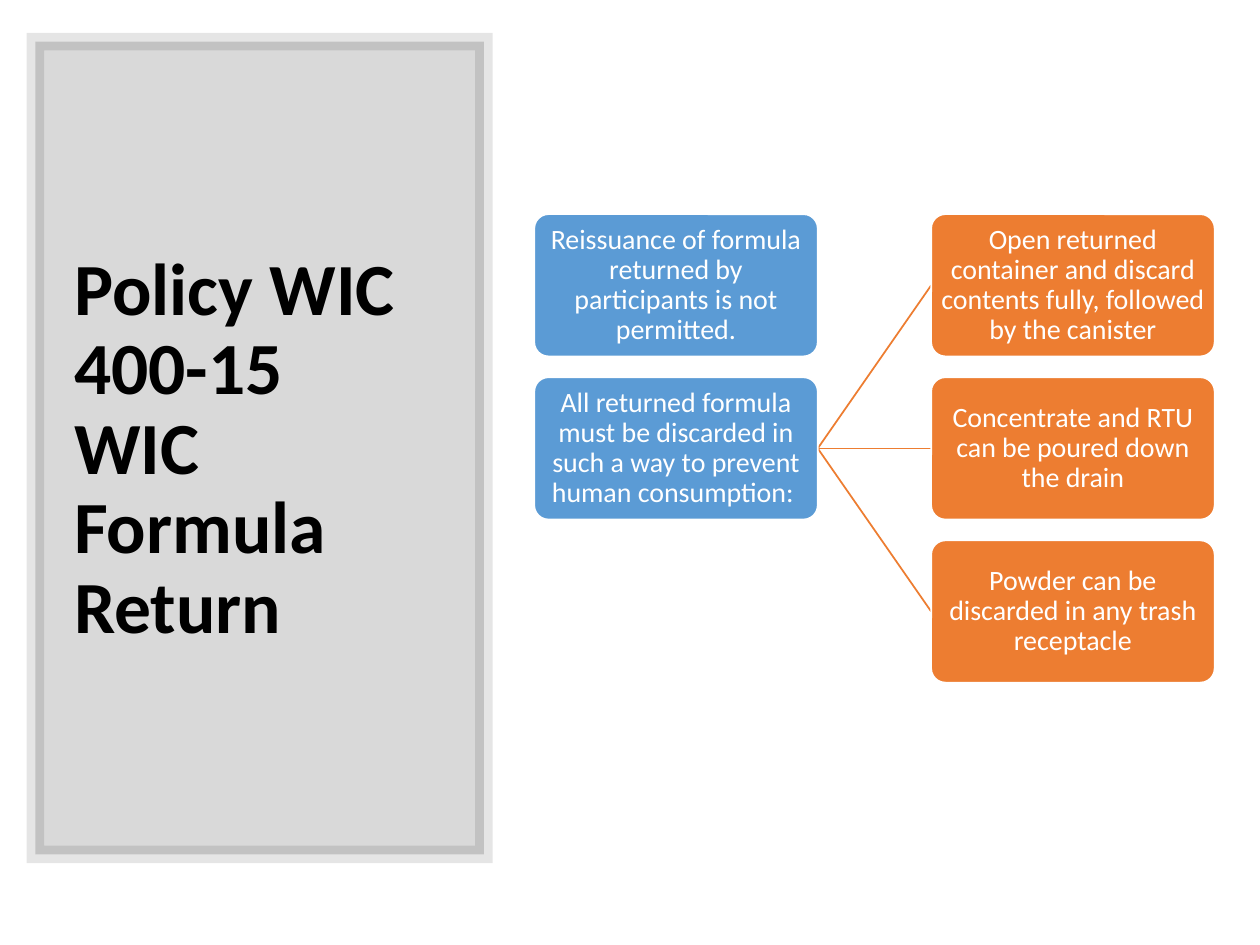
from dataclasses import dataclass

import lxml.etree
import pptx
import pptx.dml.color
import pptx.enum.shapes
import pptx.enum.text
import pptx.oxml.ns
import pptx.util

Pt = pptx.util.Pt
RGBColor = pptx.dml.color.RGBColor
Shape = pptx.enum.shapes.MSO_SHAPE
Align = pptx.enum.text.PP_ALIGN
qn = pptx.oxml.ns.qn

BLACK = RGBColor(0, 0, 0)
WHITE = RGBColor(255, 255, 255)
BLUE = RGBColor(0x5B, 0x9B, 0xD5)
ORANGE = RGBColor(0xED, 0x7D, 0x31)

WIDE, HIGH = 162, 81.3
LEFT, RIGHT = 305.3, 532.1
TOP, STEP = 122.4, 93.2


@dataclass
class Card:
    text: str
    left: float
    row: int
    color: RGBColor

    @property
    def top(self) -> float:
        return TOP + self.row * STEP

    @property
    def mid(self) -> float:
        return self.top + HIGH / 2


RULES = [
    Card("Reissuance of formula returned by participants is not permitted.", LEFT, 0, BLUE),
    Card("All returned formula must be discarded in such a way to prevent human consumption: ",
         LEFT, 1, BLUE),
]
STEPS = [
    Card("Open returned container and discard contents fully, followed by the canister",
         RIGHT, 0, ORANGE),
    Card("Concentrate and RTU can be poured down the drain", RIGHT, 1, ORANGE),
    Card("Powder can be discarded in any trash receptacle", RIGHT, 2, ORANGE),
]


def write(shape, text: str, *, size: float, color: RGBColor, bold: bool = False,
          align=Align.LEFT, inset: tuple[float, float] = (7.2, 3.6)) -> None:
    frame = shape.text_frame
    frame.word_wrap = True
    frame.vertical_anchor = pptx.enum.text.MSO_ANCHOR.MIDDLE
    frame.margin_left = frame.margin_right = Pt(inset[0])
    frame.margin_top = frame.margin_bottom = Pt(inset[1])
    para = frame.paragraphs[0]
    para.text = text
    para.alignment = align
    para.line_spacing = 0.9
    for run in para.runs:
        run.font.name = "Calibri"
        run.font.size = Pt(size)
        run.font.bold = bold
        run.font.color.rgb = color


def block(slide, kind, left: float, top: float, wide: float, high: float,
          fill: RGBColor, edge: RGBColor, weight: float):
    shape = slide.shapes.add_shape(kind, Pt(left), Pt(top), Pt(wide), Pt(high))
    shape.shadow.inherit = False
    shape.fill.solid()
    shape.fill.fore_color.rgb = fill
    shape.line.color.rgb = edge
    shape.line.width = Pt(weight)
    return shape


def panel(slide) -> None:
    shape = block(slide, Shape.RECTANGLE, 20.2, 23.8, 256.3, 464.4, BLACK, BLACK, 10)
    props = shape.element.spPr
    for color, share in zip(props.iter(qn("a:srgbClr")), (15, 10)):
        lxml.etree.SubElement(color, qn("a:alpha"), val=str(share * 1000))
    lxml.etree.SubElement(props.find(qn("a:ln")), qn("a:miter"), lim="800000")


def link(slide, start: Card, end: Card) -> None:
    line = slide.shapes.add_connector(
        pptx.enum.shapes.MSO_CONNECTOR.STRAIGHT,
        Pt(start.left + WIDE), Pt(start.mid), Pt(end.left), Pt(end.mid))
    line.line.color.rgb = ORANGE
    line.line.width = Pt(1)
    lxml.etree.SubElement(line.element.spPr, qn("a:effectLst"))


def draw(slide, card: Card) -> None:
    shape = block(slide, Shape.ROUNDED_RECTANGLE, card.left, card.top, WIDE, HIGH,
                  card.color, WHITE, 1)
    shape.adjustments[0] = 0.1
    write(shape, card.text, size=16, color=WHITE, align=Align.CENTER, inset=(3, 3))


def main() -> None:
    deck = pptx.Presentation()
    deck.slide_width, deck.slide_height = Pt(720), Pt(540)
    slide = deck.slides.add_slide(deck.slide_layouts[6])

    panel(slide)
    title = slide.shapes.add_textbox(Pt(35.3), Pt(50.4), Pt(224.6), Pt(414))
    write(title, "Policy WIC 400-15 \vWIC Formula Return", size=42, color=BLACK, bold=True)

    for card in STEPS:
        link(slide, RULES[1], card)
    for card in RULES + STEPS:
        draw(slide, card)

    deck.save("out.pptx")


if __name__ == "__main__":
    main()
